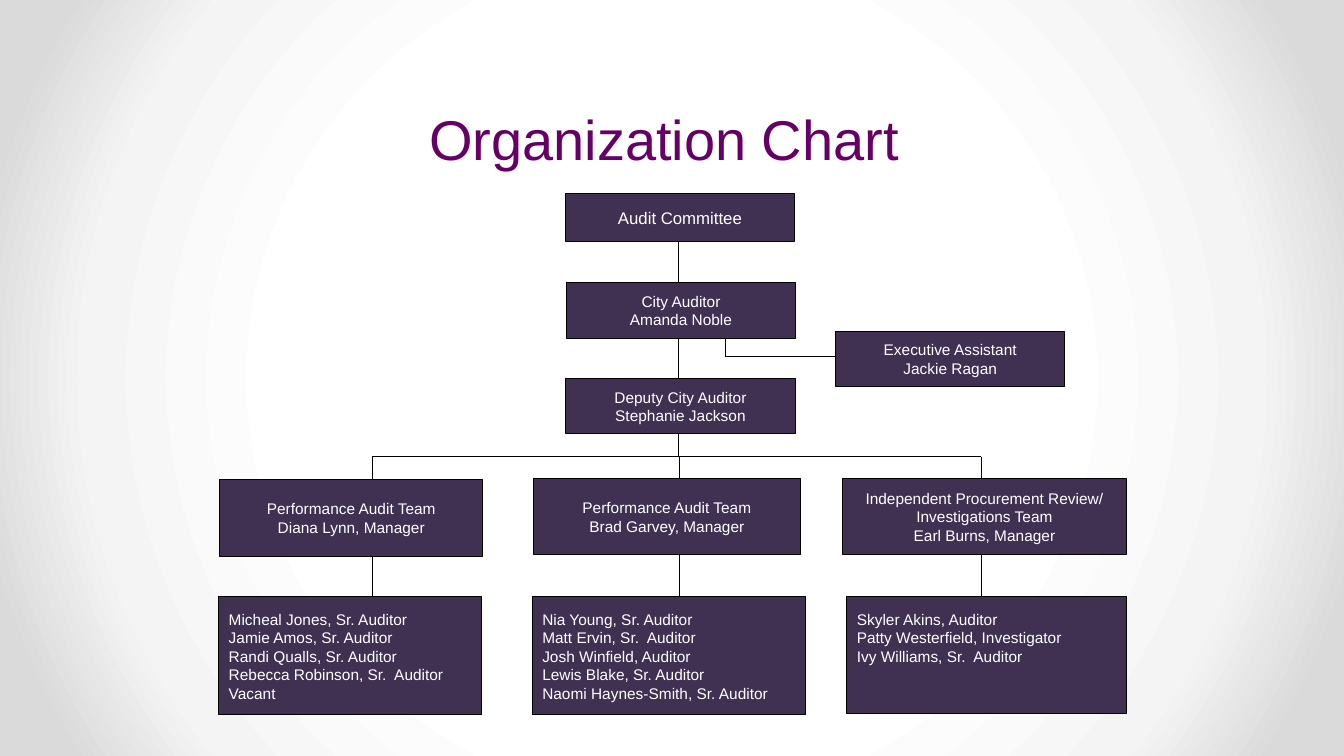
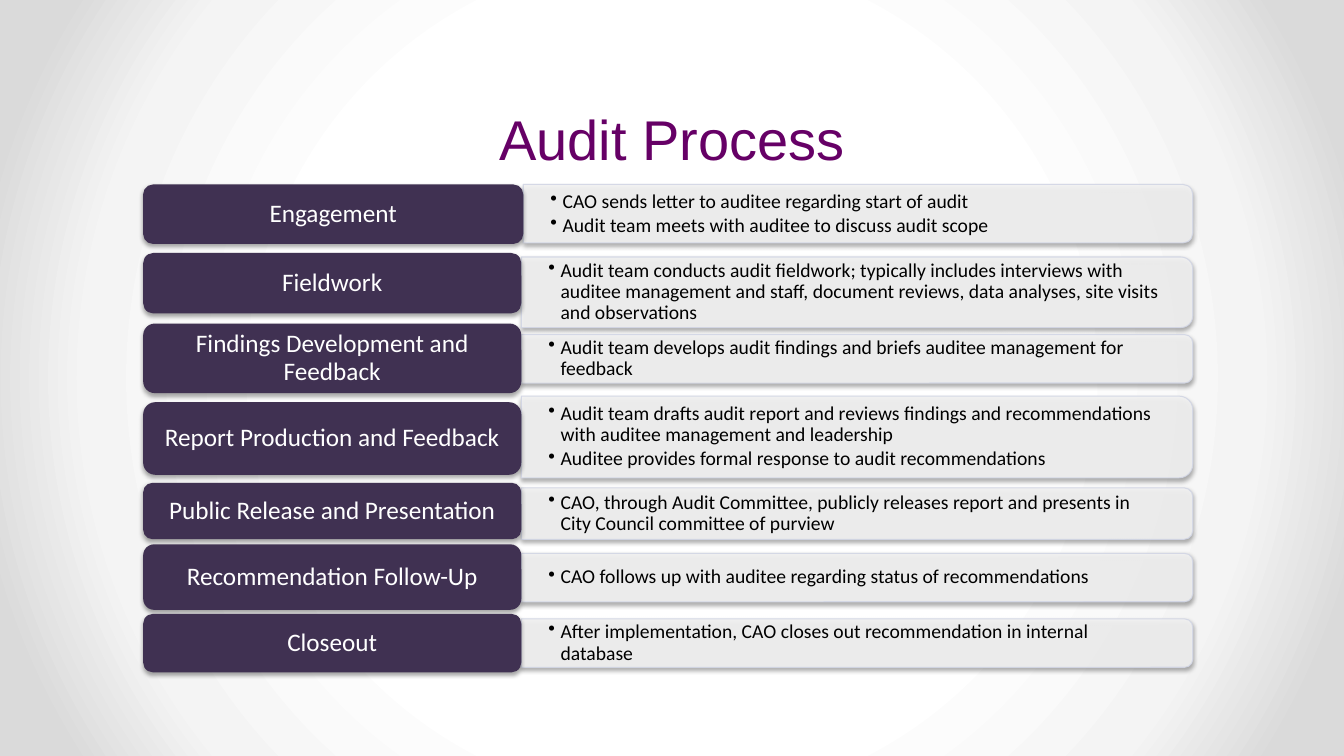
from pptx import Presentation
from pptx.dml.color import RGBColor
from pptx.enum.shapes import MSO_CONNECTOR, MSO_SHAPE
from pptx.enum.text import MSO_ANCHOR, MSO_AUTO_SIZE, PP_ALIGN
from pptx.oxml import parse_xml
from pptx.oxml.ns import nsdecls, qn
from pptx.util import Inches, Pt

PROCESS = MSO_SHAPE.FLOWCHART_PROCESS
ROUNDED = MSO_SHAPE.ROUNDED_RECTANGLE
TAB = MSO_SHAPE.ROUND_2_SAME_RECTANGLE
STRAIGHT = MSO_CONNECTOR.STRAIGHT
LEFT, CENTER = PP_ALIGN.LEFT, PP_ALIGN.CENTER
TOP, MIDDLE, BOTTOM = MSO_ANCHOR.TOP, MSO_ANCHOR.MIDDLE, MSO_ANCHOR.BOTTOM

PLUM, TITLE_PURPLE = "403152", "660066"
BLACK, WHITE = "000000", "FFFFFF"
PANEL, PANEL_EDGE = "F2F2F2", "D2D6E5"
BACKDROP = [(0, WHITE), (50, WHITE), (76, "F4F4F4"), (92, "DADADA"), (100, "DADADA")]

LEADERS = [
    ((5.61, 1.92, 2.27, 0.48), 12, ["Audit Committee"]),
    ((5.62, 2.8, 2.27, 0.56), 11, ["City Auditor", "Amanda Noble"]),
    ((5.61, 3.76, 2.28, 0.54), 11, ["Deputy City Auditor", "Stephanie Jackson"]),
    ((8.29, 3.29, 2.27, 0.54), 11, ["Executive Assistant", "Jackie Ragan"]),
]
TEAMS = [
    {"x": 3.69, "manager_box": (2.18, 4.76, 2.61, 0.76),
     "manager": ["Performance Audit Team", "Diana Lynn, Manager"],
     "member_box": (2.17, 5.92, 2.61, 1.17),
     "members": ["Micheal Jones, Sr. Auditor", "Jamie Amos, Sr. Auditor",
                 "Randi Qualls, Sr. Auditor", "Rebecca Robinson, Sr.  Auditor", "Vacant"]},
    {"x": 6.74, "manager_box": (5.29, 4.75, 2.65, 0.75),
     "manager": ["Performance Audit Team", "Brad Garvey, Manager"],
     "member_box": (5.28, 5.92, 2.71, 1.17),
     "members": ["Nia Young, Sr. Auditor", "Matt Ervin, Sr.  Auditor", "Josh Winfield, Auditor",
                 "Lewis Blake, Sr. Auditor", "Naomi Haynes-Smith, Sr. Auditor"]},
    {"x": 9.73, "manager_box": (8.36, 4.75, 2.81, 0.75),
     "manager": ["Independent Procurement Review/", "Investigations Team", "Earl Burns, Manager"],
     "member_box": (8.4, 5.92, 2.77, 1.16),
     "members": ["Skyler Akins, Auditor", "Patty Westerfield, Investigator",
                 "Ivy Williams, Sr.  Auditor"]},
]
TRUNK_X, BRANCH_Y = 6.73, 4.53
ASSISTANT_X, ASSISTANT_Y = 7.2, 3.54

LABEL_LEFT, PANEL_RIGHT = 1.42, 11.83
STEPS = [
    ("Engagement", 5.19, (1.83, 0.59), (1.83, 0.58),
     ["CAO sends letter to auditee regarding start of audit",
      "Audit team meets with auditee to discuss audit scope"]),
    ("Fieldwork", 5.17, (2.51, 0.6), (2.55, 0.7),
     ["Audit team conducts audit fieldwork; typically includes interviews with auditee "
      "management and staff, document reviews, data analyses, site visits and observations"]),
    ("Findings Development and Feedback", 5.17, (3.21, 0.69), (3.32, 0.48),
     ["Audit team develops audit findings and briefs auditee management for feedback"]),
    ("Report Production and Feedback", 5.17, (3.99, 0.72), (3.93, 0.81),
     ["Audit team drafts audit report and reviews findings and recommendations with auditee "
      "management and leadership",
      "Auditee provides formal response to audit recommendations"]),
    ("Public Release and Presentation", 5.17, (4.79, 0.56), (4.84, 0.51),
     ["CAO, through Audit Committee, publicly releases report and presents in City Council "
      "committee of purview"]),
    ("Recommendation Follow-Up", 5.17, (5.4, 0.65), (5.49, 0.48),
     ["CAO follows up with auditee regarding status of recommendations"]),
    ("Closeout", 5.17, (6.09, 0.58), (6.14, 0.48),
     ["After implementation, CAO closes out recommendation in internal database"]),
]


def rgb(color):
    return RGBColor.from_string(color)


def inches(values):
    return [Inches(v) for v in values]


def set_backdrop(master):
    master.background.fill.solid()
    bg = master.element.find(".//" + qn("p:bgPr"))
    stops = "".join(f'<a:gs pos="{pos * 1000}"><a:srgbClr val="{color}"/></a:gs>'
                    for pos, color in BACKDROP)
    bg.replace(bg[0], parse_xml(
        f'<a:gradFill {nsdecls("a")} rotWithShape="1"><a:gsLst>{stops}</a:gsLst>'
        '<a:path path="circle"><a:fillToRect l="50000" t="50000" r="50000" b="50000"/></a:path>'
        '</a:gradFill>'))


def write(tf, lines, size, color, font, align=CENTER, anchor=MIDDLE, spacing=None,
          margins=(0.1, 0.05, 0.1, 0.05)):
    tf.word_wrap = True
    tf.auto_size = MSO_AUTO_SIZE.NONE
    tf.vertical_anchor = anchor
    tf.margin_left, tf.margin_top, tf.margin_right, tf.margin_bottom = inches(margins)
    tf.text = "\n".join(lines)
    for p in tf.paragraphs:
        p.alignment = align
        p.line_spacing = spacing
        for r in p.runs:
            r.font.size, r.font.name = Pt(size), font
            r.font.color.rgb = rgb(color)


def add_slide(prs, title, left):
    slide = prs.slides.add_slide(prs.slide_layouts[5])
    s = slide.shapes.title
    s.left, s.top, s.width, s.height = inches((left, 0, 13.17 - 2 * left + left, 1.75))
    s.width = Inches(12.83 if left < 0.2 else 12.67)
    write(s.text_frame, [title], 40, TITLE_PURPLE, "Arial", anchor=BOTTOM, spacing=Pt(58))
    return slide


def add_box(slide, kind, box, fill, line=None):
    s = slide.shapes.add_shape(kind, *inches(box))
    s.shadow.inherit = False
    s.fill.solid()
    s.fill.fore_color.rgb = rgb(fill)
    if line:
        s.line.color.rgb = rgb(line)
        s.line.width = Pt(0.75)
    else:
        s.line.fill.background()
    return s


def add_line(slide, x1, y1, x2, y2):
    s = slide.shapes.add_connector(STRAIGHT, *inches((x1, y1, x2, y2)))
    s.line.color.rgb = rgb(BLACK)
    s.line.width = Pt(0.75)
    s.element.spPr.append(parse_xml(f'<a:effectLst {nsdecls("a")}/>'))


def add_shadow(s):
    s.element.spPr.find(qn("a:effectLst")).append(parse_xml(
        f'<a:outerShdw {nsdecls("a")} blurRad="40000" dist="23000" dir="5400000" '
        'rotWithShape="0"><a:srgbClr val="000000"><a:alpha val="35000"/></a:srgbClr>'
        '</a:outerShdw>'))


def set_alpha(s, percent):
    for color in s.element.spPr.iter(qn("a:srgbClr")):
        color.append(parse_xml(f'<a:alpha {nsdecls("a")} val="{percent * 1000}"/>'))


def add_bullets(tf):
    for p in tf.paragraphs:
        p.space_after = Pt(2)
        pPr = p._p.get_or_add_pPr()
        pPr.set("marL", str(Inches(0.12)))
        pPr.set("indent", str(-Inches(0.12)))
        pPr.append(parse_xml(f'<a:buChar {nsdecls("a")} char="•"/>'))


def org_box(slide, box, lines, size=11, **layout):
    s = add_box(slide, PROCESS, box, PLUM, BLACK)
    write(s.text_frame, lines, size, WHITE, "Arial", **layout)


def build_org_chart(prs):
    slide = add_slide(prs, "Organization Chart", 0.17)
    for box, size, lines in LEADERS:
        org_box(slide, box, lines, size)
    for team in TEAMS:
        org_box(slide, team["manager_box"], team["manager"])
        org_box(slide, team["member_box"], team["members"], align=LEFT, anchor=TOP,
                margins=(0.1, 0.13, 0.1, 0.05))

    chain = [box for box, _, _ in LEADERS[:3]]
    for upper, lower in zip(chain, chain[1:]):
        add_line(slide, TRUNK_X, upper[1] + upper[3], TRUNK_X, lower[1])
    add_line(slide, ASSISTANT_X, chain[1][1] + chain[1][3], ASSISTANT_X, ASSISTANT_Y)
    add_line(slide, ASSISTANT_X, ASSISTANT_Y, LEADERS[3][0][0], ASSISTANT_Y)
    add_line(slide, TRUNK_X, chain[2][1] + chain[2][3], TRUNK_X, BRANCH_Y)
    add_line(slide, TEAMS[0]["x"], BRANCH_Y, TEAMS[-1]["x"], BRANCH_Y)
    for team in TEAMS:
        x, manager = team["x"], team["manager_box"]
        add_line(slide, x, BRANCH_Y, x, manager[1])
        add_line(slide, x, manager[1] + manager[3], x, team["member_box"][1])


def build_process(prs):
    slide = add_slide(prs, "Audit Process", 0.33)
    for label, split, (label_top, label_h), (top, height), bullets in STEPS:
        width = PANEL_RIGHT - split
        turned = (split + (width - height) / 2, top + (height - width) / 2, height, width)
        s = add_box(slide, TAB, turned, PANEL, PANEL_EDGE)
        s.rotation = 90
        set_alpha(s, 90)
        add_shadow(s)

        tf = slide.shapes.add_textbox(*inches((split, top, width, height))).text_frame
        write(tf, bullets, 14, BLACK, "Calibri", align=LEFT, spacing=0.9,
              margins=(0.27, 0, 0.3, 0))
        add_bullets(tf)

        s = add_box(slide, ROUNDED, (LABEL_LEFT, label_top, split - LABEL_LEFT, label_h), PLUM)
        add_shadow(s)
        write(s.text_frame, [label], 18, WHITE, "Calibri", spacing=0.9,
              margins=(0.1, 0.05, 0.1, 0.05))


def main():
    prs = Presentation()
    prs.slide_width, prs.slide_height = Inches(13.33), Inches(7.5)
    set_backdrop(prs.slide_master)
    build_org_chart(prs)
    build_process(prs)
    prs.save("out.pptx")


if __name__ == "__main__":
    main()
